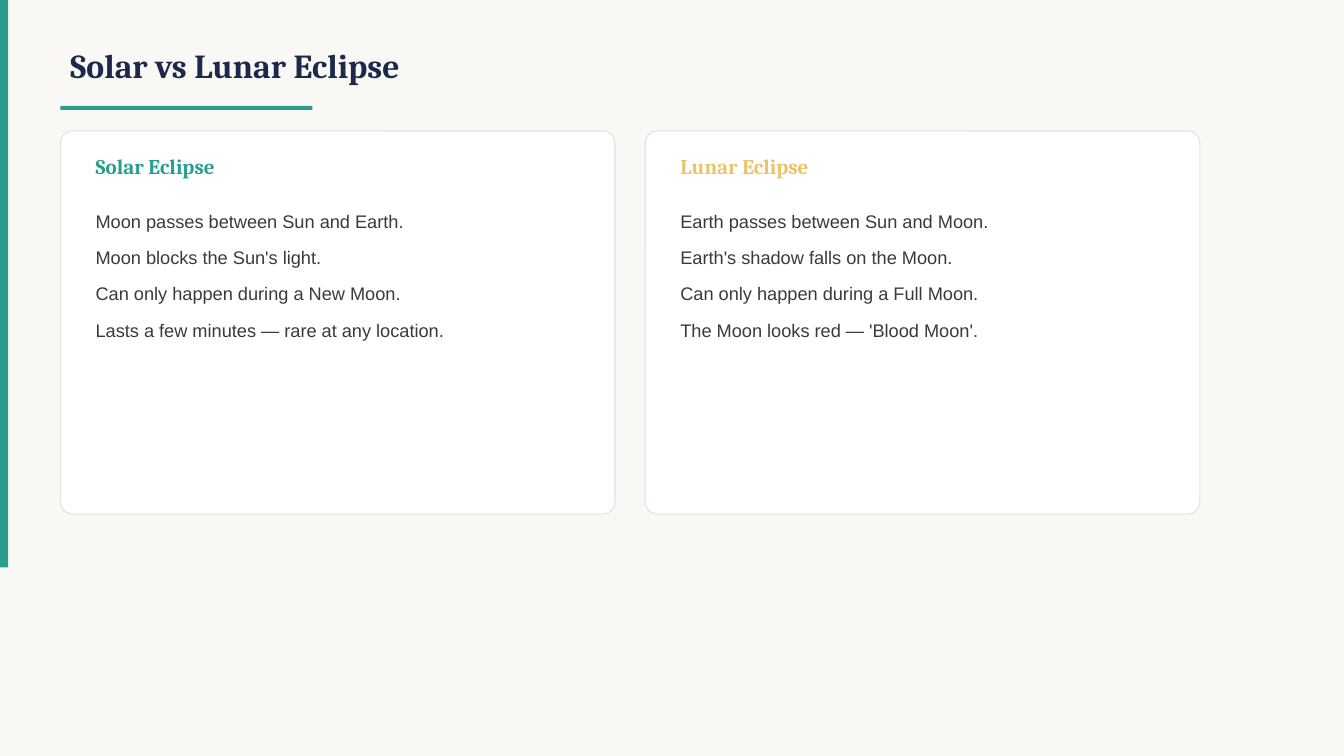
"""Build a slide comparing solar and lunar eclipses in two cards."""
import pptx
import pptx.util
import pptx.dml.color
import pptx.enum.shapes
import pptx.enum.text

Inches, Pt = pptx.util.Inches, pptx.util.Pt
RGBColor = pptx.dml.color.RGBColor
SHAPE = pptx.enum.shapes.MSO_SHAPE
ANCHOR = pptx.enum.text.MSO_ANCHOR

CREAM = RGBColor(0xFA, 0xF8, 0xF5)
TEAL = RGBColor(0x2A, 0x9D, 0x8F)
NAVY = RGBColor(0x1B, 0x2A, 0x4A)
GOLD = RGBColor(0xE9, 0xC4, 0x6A)
WHITE = RGBColor(0xFF, 0xFF, 0xFF)
BORDER = RGBColor(0xE5, 0xE2, 0xDC)
INK = RGBColor(0x3D, 0x3A, 0x36)

HEADING = {"name": "Cambria", "bold": True}
BODY = {"name": "Arial", "size": Pt(13)}
BODY_SPACING = {"line_spacing": 1.4, "space_after": Pt(4)}


def add_box(kind, box, fill):
    sp = s.shapes.add_shape(kind, *map(Inches, box))
    sp.shadow.inherit = False
    sp.fill.solid()
    sp.fill.fore_color.rgb = fill
    sp.line.fill.background()
    return sp


def add_text(box, lines, color, font, anchor=ANCHOR.MIDDLE, spacing={}):
    tf = s.shapes.add_textbox(*map(Inches, box)).text_frame
    tf.word_wrap = True
    tf.vertical_anchor = anchor
    for i, line in enumerate(lines):
        p = tf.add_paragraph() if i else tf.paragraphs[0]
        for key, value in spacing.items():
            setattr(p, key, value)
        r = p.add_run()
        r.text = line
        for key, value in font.items():
            setattr(r.font, key, value)
        r.font.color.rgb = color


prs = pptx.Presentation()
prs.slide_width, prs.slide_height = Inches(13.33), Inches(7.5)
s = prs.slides.add_slide(prs.slide_layouts[6])
s.background.fill.solid()
s.background.fill.fore_color.rgb = CREAM

add_box(SHAPE.RECTANGLE, (0, 0, 0.08, 5.63), TEAL)
add_text((0.6, 0.3, 10, 0.7), ["Solar vs Lunar Eclipse"], NAVY, {**HEADING, "size": Pt(24)})
add_box(SHAPE.RECTANGLE, (0.6, 1.05, 2.5, 0.04), TEAL)

cards = [
    ("Solar Eclipse", TEAL, [
        "Moon passes between Sun and Earth.",
        "Moon blocks the Sun's light.",
        "Can only happen during a New Moon.",
        "Lasts a few minutes — rare at any location.",
    ]),
    ("Lunar Eclipse", GOLD, [
        "Earth passes between Sun and Moon.",
        "Earth's shadow falls on the Moon.",
        "Can only happen during a Full Moon.",
        "The Moon looks red — 'Blood Moon'.",
    ]),
]
for i, (title, accent, facts) in enumerate(cards):
    left = 0.6 + i * 5.8
    card = add_box(SHAPE.ROUNDED_RECTANGLE, (left, 1.3, 5.5, 3.8), WHITE)
    card.adjustments[0] = 0.032
    card.line.color.rgb = BORDER
    card.line.width = Pt(0.75)
    add_text((left + 0.25, 1.45, 5, 0.4), [title], accent, {**HEADING, "size": Pt(15)})
    add_text((left + 0.25, 1.95, 5, 2.9), facts, INK, BODY, ANCHOR.TOP, BODY_SPACING)

prs.save("out.pptx")
